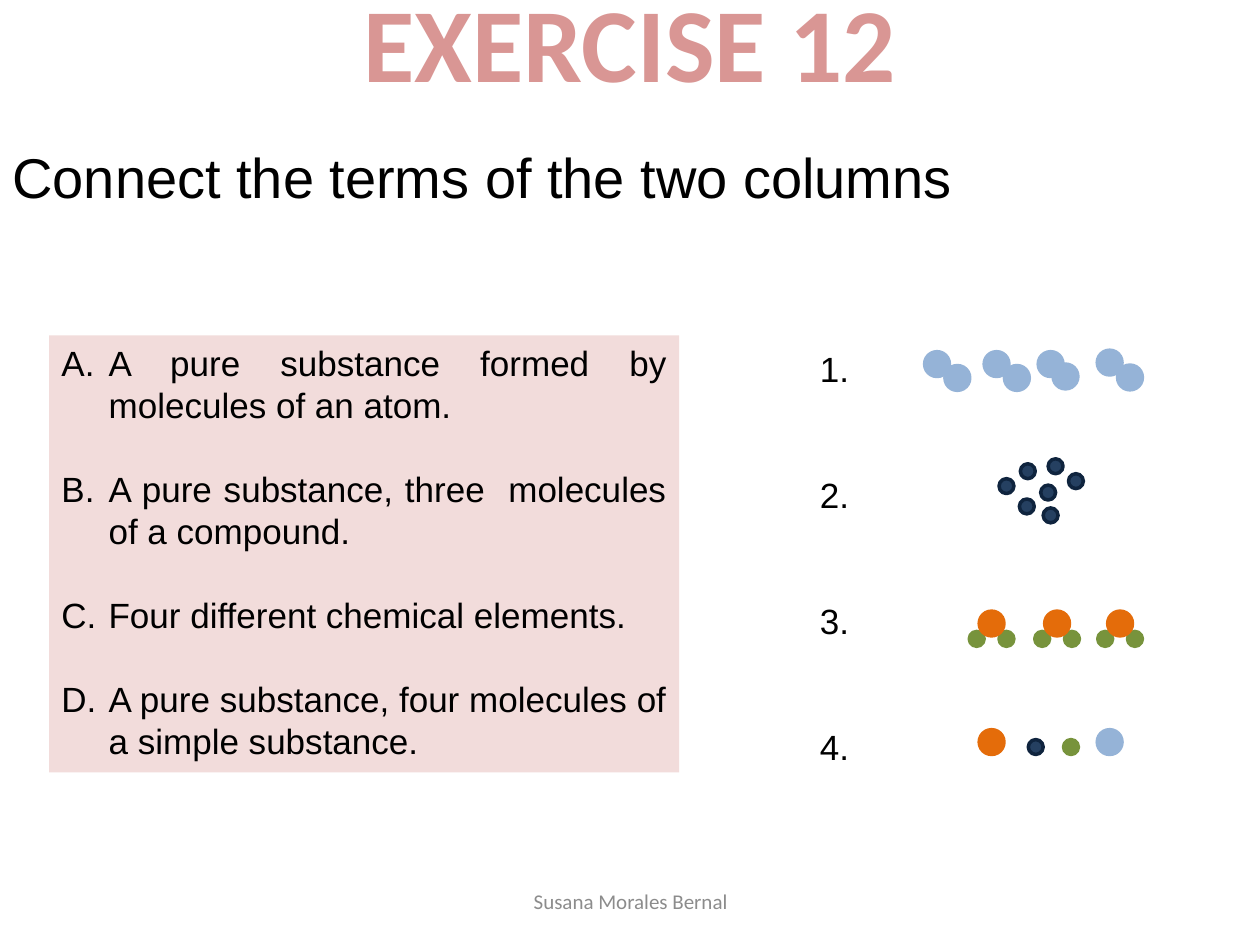
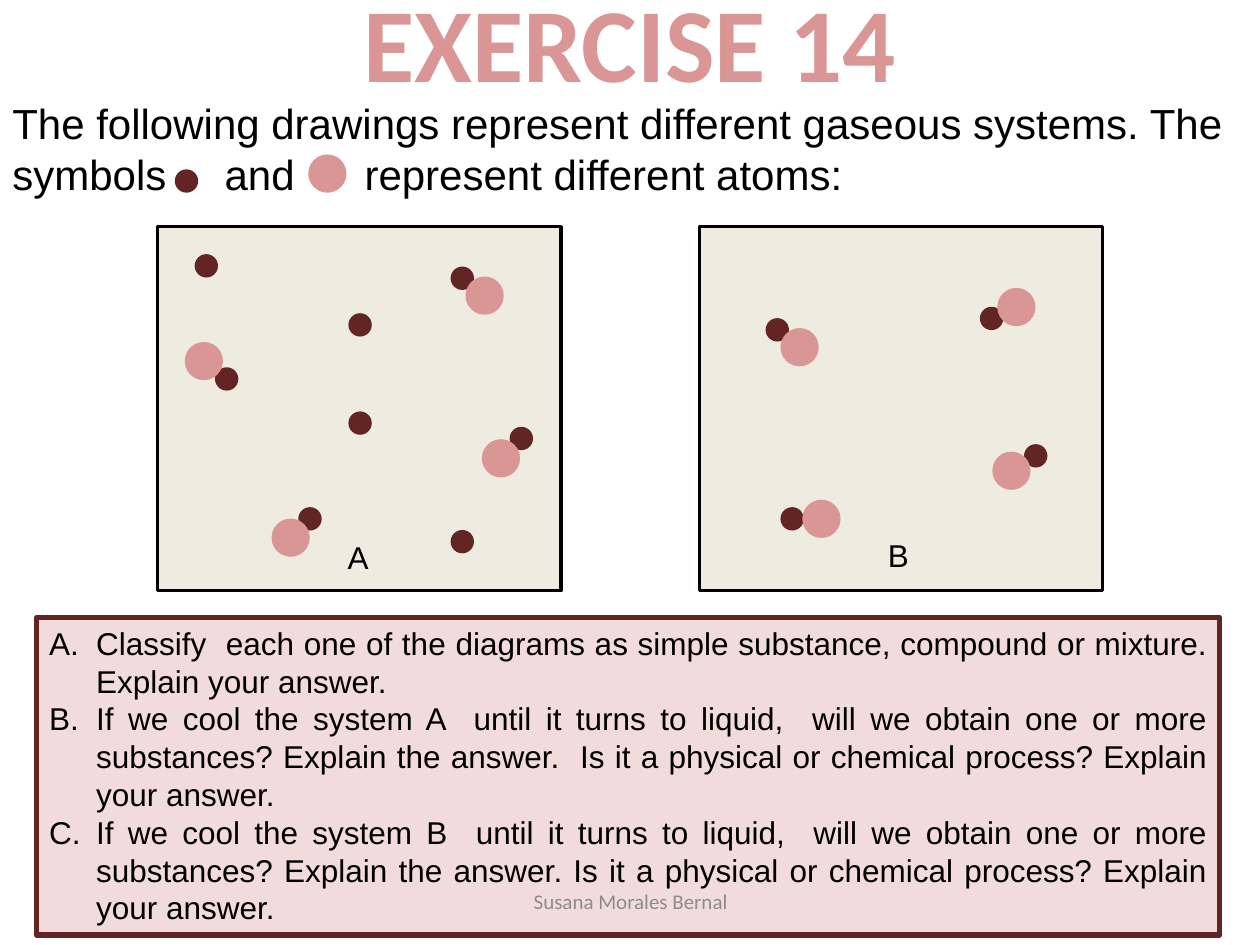
from lxml import etree
from pptx import Presentation
from pptx.dml.color import RGBColor
from pptx.enum.shapes import MSO_SHAPE
from pptx.enum.text import MSO_ANCHOR, PP_ALIGN
from pptx.oxml.ns import qn
from pptx.util import Cm, Pt

RECTANGLE, CIRCLE = MSO_SHAPE.RECTANGLE, MSO_SHAPE.FLOWCHART_CONNECTOR
LEFT, CENTER, JUSTIFY = PP_ALIGN.LEFT, PP_ALIGN.CENTER, PP_ALIGN.JUSTIFY
TOP, MIDDLE = MSO_ANCHOR.TOP, MSO_ANCHOR.MIDDLE

BLACK = RGBColor(0x00, 0x00, 0x00)
GREY = RGBColor(0x8C, 0x8C, 0x8C)
ROSE = RGBColor(0xD9, 0x96, 0x94)
PALE_ROSE = RGBColor(0xF2, 0xDC, 0xDB)
MAROON = RGBColor(0x63, 0x25, 0x23)
CREAM = RGBColor(0xEE, 0xEC, 0xE1)
LIGHT_BLUE = RGBColor(0x95, 0xB3, 0xD7)
NAVY = RGBColor(0x25, 0x40, 0x61)
DARK_NAVY = RGBColor(0x0F, 0x24, 0x3E)
GREEN = RGBColor(0x77, 0x93, 0x3C)
ORANGE = RGBColor(0xE4, 0x6C, 0x0A)

# Atoms: width, height, fill, outline
BLUE_ATOM = (0.5, 0.5, LIGHT_BLUE, LIGHT_BLUE)
ORANGE_ATOM = (0.5, 0.5, ORANGE, ORANGE)
GREEN_ATOM = (0.3, 0.3, GREEN, GREEN)
NAVY_ATOM = (0.3, 0.3, NAVY, DARK_NAVY)
SMALL_ATOM = (0.4, 0.4, MAROON, MAROON)
BIG_ATOM = (0.7, 0.7, ROSE, ROSE)


def draw(shapes, kind, x, y, width, height, fill, line=None, weight=2):
    shape = shapes.add_shape(kind, Cm(x), Cm(y), Cm(width), Cm(height))
    shape.shadow.inherit = False
    shape.fill.solid()
    shape.fill.fore_color.rgb = fill
    if line is None:
        shape.line.fill.background()
    else:
        shape.line.color.rgb = line
        shape.line.width = Pt(weight)
    return shape


def write(shape, *lines, size=20, font="Arial", color=BLACK, bold=False, align=LEFT,
          anchor=TOP, gap=0, lettered=False, tabs=()):
    """Fill a shape with paragraphs; gap is in points, tabs are in cm."""
    frame = shape.text_frame
    frame.word_wrap = True
    frame.vertical_anchor = anchor
    for number, line in enumerate(lines):
        paragraph = frame.add_paragraph() if number else frame.paragraphs[0]
        paragraph.alignment = align
        if number and gap:
            paragraph.space_before = Pt(gap)
        properties = paragraph._p.get_or_add_pPr()
        if lettered:
            properties.set("marL", str(Cm(0.95)))
            properties.set("indent", str(Cm(-0.95)))
            etree.SubElement(properties, qn("a:buFont"), typeface="+mj-lt")
            etree.SubElement(properties, qn("a:buAutoNum"), type="alphaUcPeriod")
        if tabs:
            stops = etree.SubElement(properties, qn("a:tabLst"))
            for stop in tabs:
                etree.SubElement(stops, qn("a:tab"), pos=str(Cm(stop)), algn="l")
        run = paragraph.add_run()
        run.text = line
        run.font.size = Pt(size)
        run.font.name = font
        run.font.bold = bold
        run.font.color.rgb = color


deck = Presentation()
deck.slide_width, deck.slide_height = Cm(25.4), Cm(19.05)
blank = deck.slide_layouts[6]

# Exercise 12: match each description with its particles
matching = deck.slides.add_slide(blank).shapes
descriptions = draw(matching, RECTANGLE, 0.99, 6.76, 12.7, 8.81, PALE_ROSE)
write(descriptions,
      "A pure substance formed by molecules of an atom.",
      "A pure substance, three  molecules of a compound.",
      "Four different chemical elements.",
      "A pure substance, four molecules of a simple substance.",
      align=JUSTIFY, gap=24, lettered=True)
answers = matching.add_textbox(Cm(16.28), Cm(6.88), Cm(8.33), Cm(8.81))
write(answers, "1.", "2.", "3.", "4.", gap=48)

particles = []
for x, y, dx, dy in ((18.64, 7.09, 0.41, 0.28), (19.84, 7.09, 0.41, 0.28),
                     (20.93, 7.09, 0.3, 0.25), (22.12, 7.06, 0.41, 0.3)):
    particles += [(BLUE_ATOM, x, y), (BLUE_ATOM, x + dx, y + dy)]
for x, y in ((20.57, 9.35), (20.98, 9.78), (21.13, 9.25), (20.14, 9.65),
             (21.03, 10.24), (21.54, 9.55), (20.55, 10.06)):
    particles.append((NAVY_ATOM, x, y))
for x in (19.74, 21.06, 22.33):
    particles += [(GREEN_ATOM, x - 0.2, 12.73), (GREEN_ATOM, x + 0.4, 12.73),
                  (ORANGE_ATOM, x, 12.32)]
particles += [(ORANGE_ATOM, 19.74, 14.71), (NAVY_ATOM, 20.73, 14.91),
              (GREEN_ATOM, 21.44, 14.91), (BLUE_ATOM, 22.12, 14.71)]
for atom, x, y in particles:
    draw(matching, CIRCLE, x, y, *atom)

instruction = matching.add_textbox(0, Cm(2.74), Cm(19.61), Cm(1.63))
write(instruction, "Connect the terms of the two columns", size=32)

# Exercise 14: two gaseous systems
gases = deck.slides.add_slide(blank).shapes
questions = draw(gases, RECTANGLE, 0.74, 12.45, 23.85, 6.4, PALE_ROSE, MAROON, 3)
write(questions,
      "Classify  each one of the diagrams as simple substance, compound or mixture. "
      "Explain your answer.",
      "If we cool the system A  until it turns to liquid,  will we obtain one or more "
      "substances? Explain the answer.  Is it a physical or chemical process? "
      "Explain your answer.",
      "If we cool the system B  until it turns to liquid,  will we obtain one or more "
      "substances? Explain the answer. Is it a physical or chemical process? "
      "Explain your answer.",
      size=18, align=JUSTIFY, lettered=True)
introduction = gases.add_textbox(0, Cm(1.85), Cm(25.4), Cm(2.31))
write(introduction,
      "The following drawings represent different gaseous systems. "
      "The symbols\tand\trepresent different atoms:", size=24, tabs=(4.28, 7.1))
draw(gases, CIRCLE, 3.56, 3.45, *SMALL_ATOM)
draw(gases, CIRCLE, 6.25, 3.15, *BIG_ATOM)

# Each molecule: small atom x, y, then big atom x, y
systems = (
    ("A", 3.18, 6.76, 10.72,
     ((6.05, 10.26, 5.51, 10.49), (4.37, 7.44, 3.76, 6.93),
      (10.31, 8.64, 9.75, 8.89), (9.12, 5.41, 9.42, 5.61)),
     ((9.12, 10.72), (3.96, 5.16), (7.06, 6.35), (7.06, 8.33))),
    ("B", 14.1, 17.65, 10.69,
     ((19.79, 6.22, 20.14, 5.84), (15.77, 10.26, 16.21, 10.11),
      (15.47, 6.45, 15.77, 6.65), (20.68, 8.99, 20.04, 9.14)),
     ()),
)
for letter, left, letter_x, letter_y, molecules, free_atoms in systems:
    vessel = gases.add_group_shape().shapes
    draw(vessel, RECTANGLE, left, 4.57, 8.13, 7.34, CREAM, BLACK)
    for small_x, small_y, big_x, big_y in molecules:
        draw(vessel, CIRCLE, small_x, small_y, *SMALL_ATOM)
        draw(vessel, CIRCLE, big_x, big_y, *BIG_ATOM)
    for x, y in free_atoms:
        draw(vessel, CIRCLE, x, y, *SMALL_ATOM)
    label = vessel.add_textbox(Cm(letter_x), Cm(letter_y), Cm(0.99), Cm(1.02))
    write(label, letter, size=18)

# Title and footer on every slide
for shapes, heading in ((matching, "EXERCISE 12"), (gases, "EXERCISE 14")):
    title = shapes.add_textbox(0, Cm(-0.58), Cm(25.4), Cm(2.82))
    write(title, heading, size=60, font="Calibri", color=ROSE, bold=True, align=CENTER)
    footer = shapes.add_textbox(Cm(8.69), Cm(17.65), Cm(8.05), Cm(1.02))
    write(footer, "Susana Morales Bernal", size=12, font="Calibri", color=GREY,
          align=CENTER, anchor=MIDDLE)

deck.save("out.pptx")
